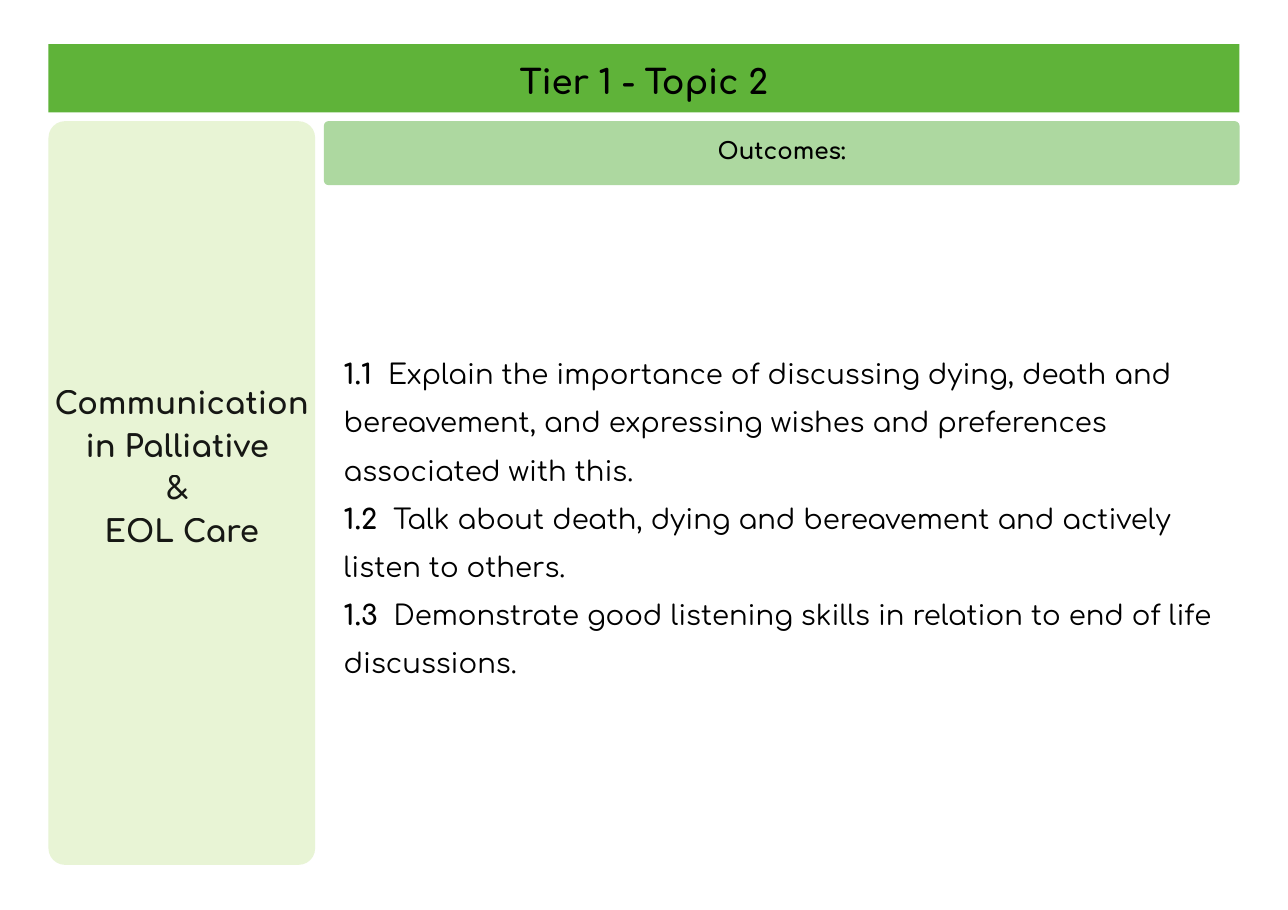
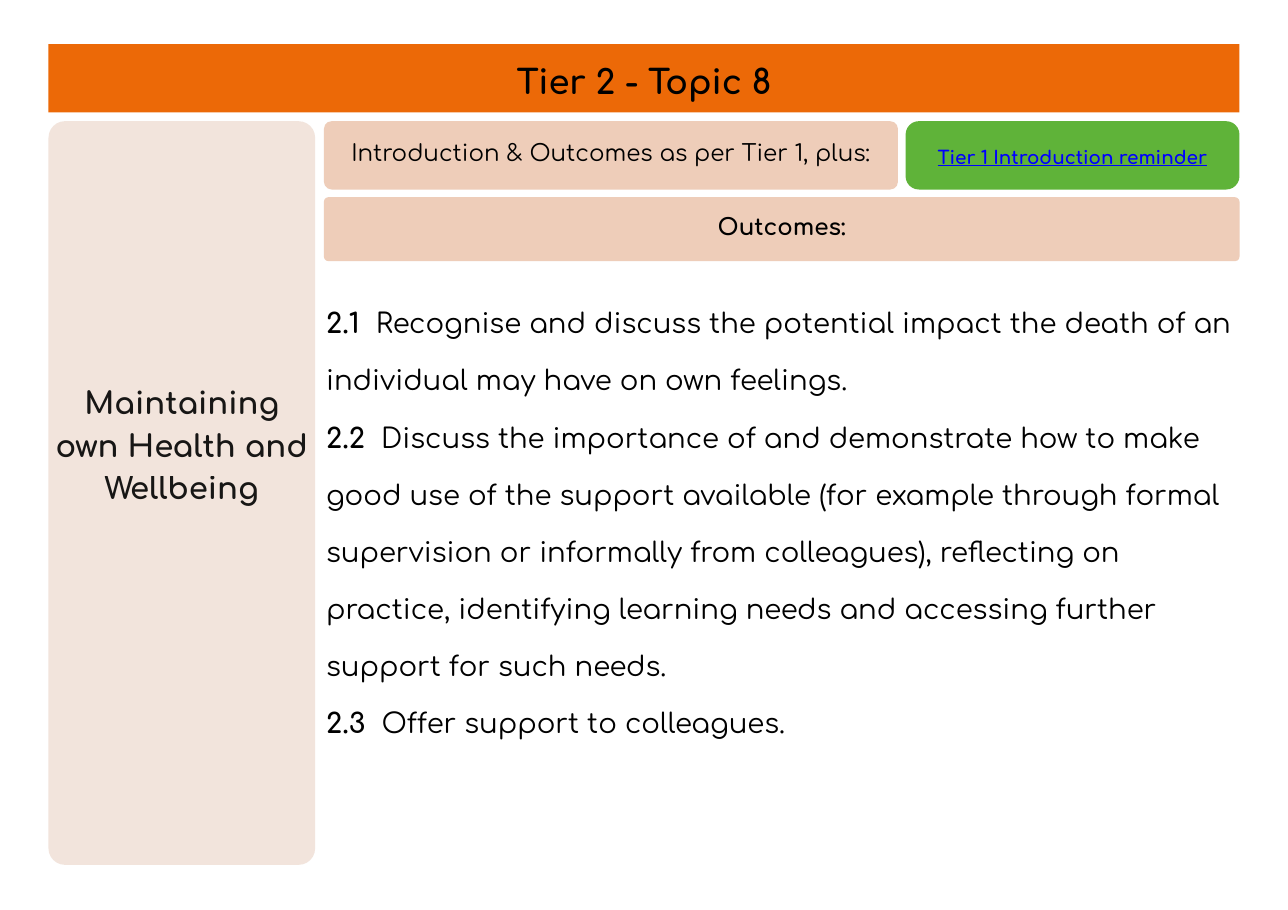
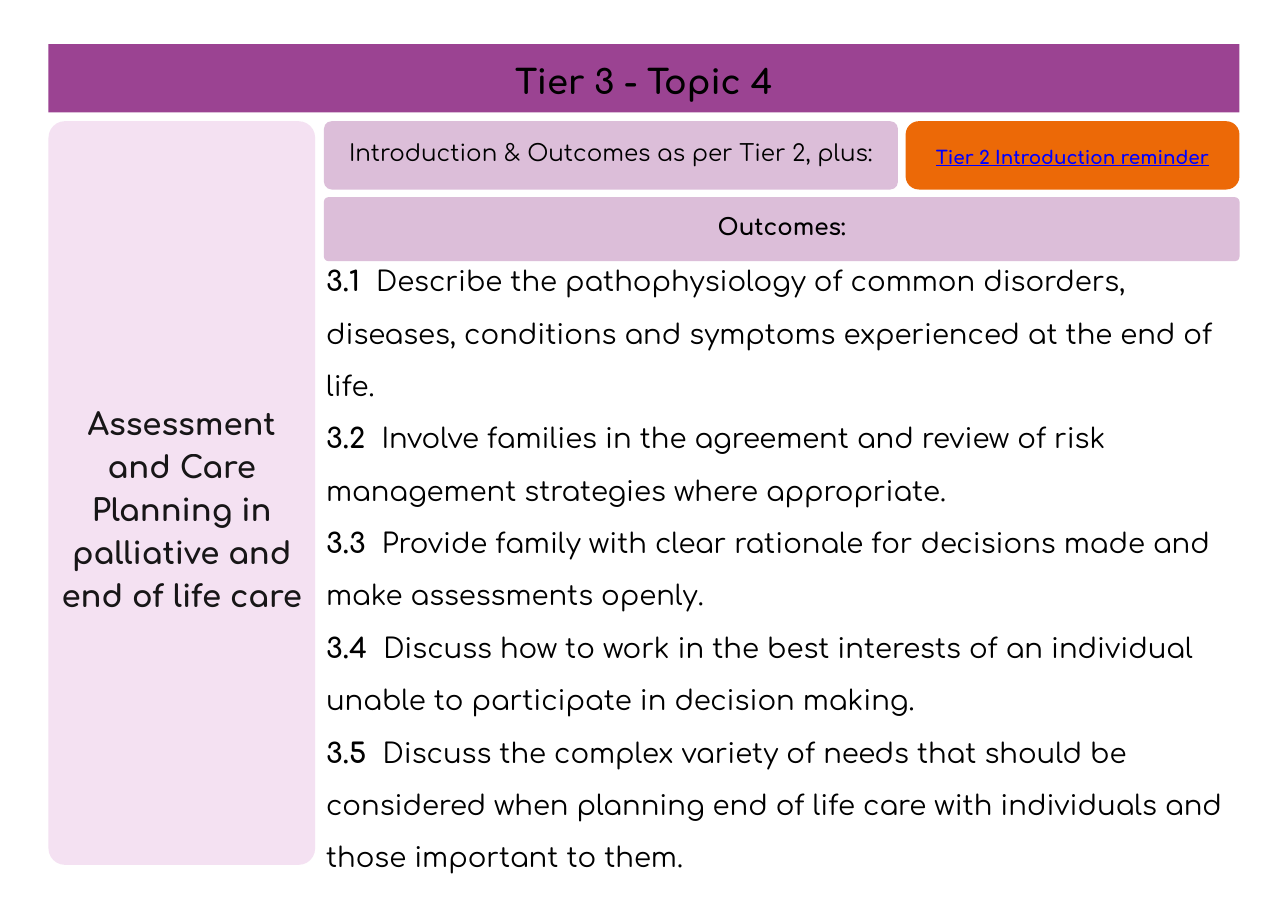
from dataclasses import dataclass

from lxml.etree import SubElement
from pptx import Presentation
from pptx.dml.color import RGBColor
from pptx.enum.shapes import MSO_SHAPE as Shape
from pptx.enum.text import MSO_ANCHOR as Anchor, MSO_AUTO_SIZE as AutoSize, PP_ALIGN as Align
from pptx.oxml.ns import qn
from pptx.util import Inches, Pt

FONT = "Comfortaa"
BLACK, LINK_BLUE = "000000", "0000FF"
GREEN, ORANGE, PURPLE = "5FB339", "EC6907", "9B4392"

LEFT, RIGHT, GAP = 0.44, 11.25, 0.08
BAND_TOP, ROW_TOP, BOTTOM = 0.4, 1.1, 7.85
BAND_HEIGHT, OUTCOMES_HEIGHT = 0.62, 0.58
PANEL_WIDTH, INTRO_WIDTH = 2.42, 5.21
CONTENT_LEFT = LEFT + PANEL_WIDTH + GAP
INSET = 0.06


@dataclass
class Topic:
    title: str
    subject: list
    outcomes: list
    band_color: str
    panel_color: str
    heading_color: str
    body_box: tuple
    body_pitch: float
    panel_lift: float
    intro: str = ""
    reminder: str = ""
    reminder_color: str = ""


TOPICS = [
    Topic(
        title="Tier 1 - Topic 2",
        subject=["Communication in Palliative ", "& ", "EOL Care"],
        outcomes=[
            ("1.1", "Explain the importance of discussing dying, death and bereavement, and expressing wishes and preferences associated with this."),
            ("1.2", "Talk about death, dying and bereavement and actively listen to others."),
            ("1.3", "Demonstrate good listening skills in relation to end of life discussions."),
        ],
        band_color=GREEN, panel_color="E6F3D1", heading_color="ADD8A0",
        body_box=(3.06, 1.43, 8.01, 6.41), body_pitch=31.5, panel_lift=0.54,
    ),
    Topic(
        title="Tier 2 - Topic 8",
        subject=["Maintaining own Health and Wellbeing"],
        outcomes=[
            ("2.1", "Recognise and discuss the potential impact the death of an individual may have on own feelings."),
            ("2.2", "Discuss the importance of and demonstrate how to make good use of the support available (for example through formal supervision or informally from colleagues), reflecting on practice, identifying learning needs and accessing further support for such needs."),
            ("2.3", "Offer support to colleagues."),
        ],
        band_color=ORANGE, panel_color="F1E2D9", heading_color="EECDB9",
        body_box=(2.9, 1.95, 8.35, 5.37), body_pitch=37.3, panel_lift=0.93,
        intro="Introduction & Outcomes as per Tier 1, plus:",
        reminder="Tier 1 Introduction reminder", reminder_color=GREEN,
    ),
    Topic(
        title="Tier 3 - Topic 4",
        subject=["Assessment and Care Planning in palliative and end of life care"],
        outcomes=[
            ("3.1", "Describe the pathophysiology of common disorders, diseases, conditions and symptoms experienced at the end of life."),
            ("3.2", "Involve families in the agreement and review of risk management strategies where appropriate."),
            ("3.3", "Provide family with clear rationale for decisions made and make assessments openly."),
            ("3.4", "Discuss how to work in the best interests of an individual unable to participate in decision making."),
            ("3.5", "Discuss the complex variety of needs that should be considered when planning end of life care with individuals and those important to them."),
        ],
        band_color=PURPLE, panel_color="F3DEF1", heading_color="DCBED9",
        body_box=(2.9, 2.04, 8.35, 6.07), body_pitch=34.2, panel_lift=-0.24,
        intro="Introduction & Outcomes as per Tier 2, plus:",
        reminder="Tier 2 Introduction reminder", reminder_color=ORANGE,
    ),
]


def paint(fill, color, opacity=100):
    fill.solid()
    fill.fore_color.rgb = RGBColor.from_string(color)
    if opacity < 100:
        color_element = fill._xPr.find(qn("a:solidFill")).find(qn("a:srgbClr"))
        SubElement(color_element, qn("a:alpha"), val=str(opacity * 1000))


def place(shape, box):
    shape.left, shape.top, shape.width, shape.height = map(Inches, box)


def set_frame(frame, lift=0, side=INSET):
    frame.word_wrap = True
    frame.auto_size = AutoSize.NONE
    frame.vertical_anchor = Anchor.MIDDLE
    frame.margin_left = frame.margin_right = Inches(side)
    frame.margin_top = Inches(max(-lift, 0))
    frame.margin_bottom = Inches(max(lift, 0))


def write(frame, paragraphs, size, pitch, align=Align.CENTER, color=BLACK,
          opacity=100, bold=True, underline=False):
    for index, runs in enumerate(paragraphs):
        paragraph = frame.add_paragraph() if index else frame.paragraphs[0]
        paragraph.alignment = align
        paragraph.line_spacing = Pt(pitch)
        paragraph.space_before = paragraph.space_after = Pt(0)
        if isinstance(runs, str):
            runs = [(runs, bold)]
        for text, is_bold in runs:
            run = paragraph.add_run()
            run.text = text
            font = run.font
            font.name, font.size, font.bold = FONT, Pt(size), is_bold
            font.underline = underline
            paint(font.fill, color, opacity)


def add_card(slide, box, radius, card_color, paragraphs, lift, opacity=100, **text_format):
    card = slide.shapes.add_shape(Shape.ROUNDED_RECTANGLE, *map(Inches, box))
    card.adjustments[0] = radius / min(box[2:])
    card.shadow.inherit = False
    card.line.fill.background()
    paint(card.fill, card_color, opacity)
    set_frame(card.text_frame, lift, side=0)
    write(card.text_frame, paragraphs, opacity=opacity, **text_format)


def add_title_band(slide, box, topic):
    title = slide.shapes.title
    place(title, box)
    geometry = SubElement(title._element.spPr, qn("a:prstGeom"), prst="roundRect")
    guides = SubElement(geometry, qn("a:avLst"))
    SubElement(guides, qn("a:gd"), name="adj", fmla="val 5600")
    paint(title.fill, topic.band_color)
    set_frame(title.text_frame, lift=-0.12)
    write(title.text_frame, [topic.title], size=22, pitch=21.8)


def add_outcome_list(slide, box, topic):
    body = slide.placeholders[1]
    place(body, box)
    set_frame(body.text_frame)
    items = [[(number, True), ("  " + text, False)] for number, text in topic.outcomes]
    write(body.text_frame, items, size=18, pitch=topic.body_pitch, align=Align.LEFT)
    for paragraph in body.text_frame.paragraphs:
        properties = paragraph._p.get_or_add_pPr()
        properties.set("marL", "0")
        properties.set("indent", "0")
        SubElement(properties, qn("a:buNone"))


def add_subject_panel(slide, box, topic):
    add_card(slide, box, 0.15, topic.panel_color, topic.subject, topic.panel_lift,
             opacity=90, size=20, pitch=28)


def add_intro_row(slide, box, topic):
    left, top, width, height = box
    add_card(slide, (left, top, INTRO_WIDTH, height), 0.07, topic.heading_color,
             [topic.intro], 0.09, size=15, pitch=21, bold=False)
    offset = INTRO_WIDTH + GAP - 0.01
    add_card(slide, (left + offset, top, width - offset, height), 0.12,
             topic.reminder_color, [topic.reminder], -0.06, size=12, pitch=11.9,
             color=LINK_BLUE, underline=True)


def add_outcomes_heading(slide, box, topic):
    add_card(slide, box, 0.04, topic.heading_color, ["Outcomes:"], 0.09, size=15, pitch=21)


def add_topic_slide(presentation, topic):
    slide = presentation.slides.add_slide(presentation.slide_layouts[1])
    content_width = RIGHT - CONTENT_LEFT
    add_title_band(slide, (LEFT, BAND_TOP, RIGHT - LEFT, BAND_HEIGHT), topic)
    add_subject_panel(slide, (LEFT, ROW_TOP, PANEL_WIDTH, BOTTOM - ROW_TOP), topic)
    heading_top = ROW_TOP
    if topic.intro:
        add_intro_row(slide, (CONTENT_LEFT, ROW_TOP, content_width, BAND_HEIGHT), topic)
        heading_top += BAND_HEIGHT + GAP - 0.01
    add_outcomes_heading(slide, (CONTENT_LEFT, heading_top, content_width, OUTCOMES_HEIGHT), topic)
    add_outcome_list(slide, topic.body_box, topic)


def main():
    presentation = Presentation()
    presentation.slide_width, presentation.slide_height = Inches(11.69), Inches(8.26)
    for topic in TOPICS:
        add_topic_slide(presentation, topic)
    presentation.save("out.pptx")


if __name__ == "__main__":
    main()
